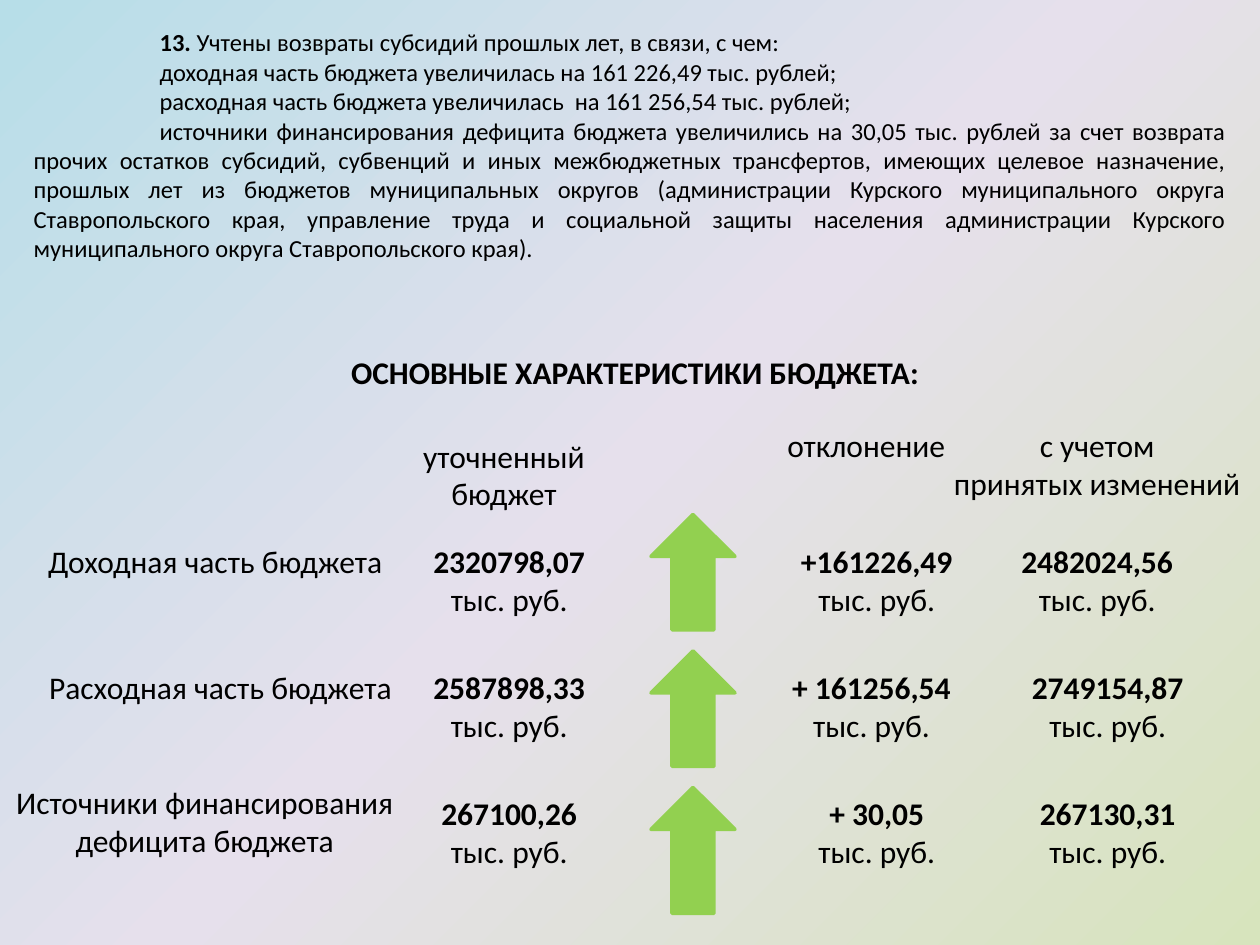
from pptx import Presentation
from pptx.dml.color import RGBColor
from pptx.enum.shapes import MSO_SHAPE
from pptx.enum.text import MSO_ANCHOR, MSO_AUTO_SIZE, PP_ALIGN
from pptx.oxml import parse_xml
from pptx.oxml.ns import nsdecls
from pptx.util import Inches, Pt

UP_ARROW = MSO_SHAPE.UP_ARROW
TOP = MSO_ANCHOR.TOP
GROW = MSO_AUTO_SIZE.SHAPE_TO_FIT_TEXT
CENTER, JUSTIFY = PP_ALIGN.CENTER, PP_ALIGN.JUSTIFY
COLORS = {"text": "000000", "arrow": "92D050",
          "green": "D7E4BD", "lilac": "E6E0EC", "blue": "B7DEE8"}
FONT = "Calibri"
UNIT = "тыс. руб."

deck = Presentation()
deck.slide_width, deck.slide_height = Inches(10), Inches(7.5)
COL, ROW = deck.slide_width / 120, deck.slide_height / 90
page = deck.slides.add_slide(deck.slide_layouts[1])


def place(box, left, top, width, height):
    """Put a shape on the grid of 120 columns and 90 rows."""
    box.left, box.width = round(left * COL), round(width * COL)
    box.top, box.height = round(top * ROW), round(height * ROW)


def write(box, lines, size=18, align=CENTER, bold_first=False, wrap=True):
    """Fill a box with one paragraph per line."""
    frame = box.text_frame
    frame.text = "\n".join(lines)
    frame.word_wrap, frame.auto_size = wrap, GROW
    frame.vertical_anchor = TOP
    for index, para in enumerate(frame.paragraphs):
        para.alignment = align
        para.space_before = Pt(0)
        para.font.name, para.font.size = FONT, Pt(size)
        para.font.bold = bold_first and index == 0
        para.font.color.rgb = RGBColor.from_string(COLORS["text"])


# Background: radial gradient centred on the lower right corner
page.background.fill.gradient()
stops = "".join(
    f'<a:gs pos="{share * 1000}"><a:srgbClr val="{COLORS[name]}"/></a:gs>'
    for share, name in ((0, "green"), (50, "lilac"), (100, "blue")))
old_gradient = page.element.xpath(".//p:bgPr/a:gradFill")[0]
old_gradient.getparent().replace(old_gradient, parse_xml(
    f'<a:gradFill {nsdecls("a")} rotWithShape="1"><a:gsLst>{stops}</a:gsLst>'
    '<a:path path="circle"><a:fillToRect l="100000" t="100000"/></a:path>'
    '</a:gradFill>'))

# Heading
title = page.shapes.title
place(title, 32, 33, 57, 4.8)
write(title, ["ОСНОВНЫЕ ХАРАКТЕРИСТИКИ БЮДЖЕТА:"], bold_first=True, wrap=False)

# Introduction with indented first lines
body = page.placeholders[1]
place(body, 2, 2, 116, 23.9)
write(body, [
    "Учтены возвраты субсидий прошлых лет, в связи, с чем:",
    "доходная часть бюджета увеличилась на 161 226,49 тыс. рублей;",
    "расходная часть бюджета увеличилась  на 161 256,54 тыс. рублей;",
    "источники финансирования дефицита бюджета увеличились на 30,05 тыс. "
    "рублей за счет возврата прочих остатков субсидий, субвенций и иных "
    "межбюджетных трансфертов, имеющих целевое назначение, прошлых лет из "
    "бюджетов муниципальных округов (администрации Курского муниципального "
    "округа Ставропольского края, управление труда и социальной защиты "
    "населения администрации Курского муниципального округа "
    "Ставропольского края).",
], size=14, align=JUSTIFY)
for para in body.text_frame.paragraphs:
    properties = para._p.get_or_add_pPr()
    properties.set("marL", "0")
    properties.set("indent", str(Inches(1)))
    properties.append(parse_xml(f'<a:buNone {nsdecls("a")}/>'))
first = body.text_frame.paragraphs[0]
sentence = first.runs[0].text
first.runs[0].text = "13. "
first.runs[0].font.bold = True
first.add_run().text = sentence

# Column headings and row labels: left, top, width, lines
labels = [
    (34, 41, 28, ["уточненный", "бюджет"]),
    (73, 40, 19, ["отклонение"]),
    (89, 40, 31, ["с учетом", "принятых изменений"]),
    (3, 51, 35, ["Доходная часть бюджета"]),
    (3, 63, 36, ["Расходная часть бюджета"]),
    (0, 74, 39, ["Источники финансирования дефицита бюджета"]),
]
for left, top, width, lines in labels:
    box = page.shapes.add_textbox(0, 0, 0, 0)
    place(box, left, top, width, 8.5 if top == 74 or len(lines) > 1 else 4.8)
    write(box, lines)

# Figures: each row holds (left, width, amount) for its three columns
figures = [
    [(39, 19, "2320798,07"), (75, 17, "+161226,49"), (93, 23, "2482024,56")],
    [(39, 19, "2587898,33"), (73, 20, "+ 161256,54"), (96, 19, "2749154,87")],
    [(39, 19, "267100,26"), (73, 21, "+ 30,05"), (96, 19, "267130,31")],
]
for index, cells in enumerate(figures):
    for left, width, amount in cells:
        box = page.shapes.add_textbox(0, 0, 0, 0)
        place(box, left, 51 + 12 * index, width, 8.5)
        write(box, [amount, UNIT], bold_first=True)

# Growth arrows, the last one slightly taller
for index, height in enumerate((11, 11, 12)):
    arrow = page.shapes.add_shape(UP_ARROW, 0, 0, 0, 0)
    place(arrow, 62, 49 + 13 * index, 8, height)
    arrow.shadow.inherit = False
    arrow.fill.solid()
    arrow.fill.fore_color.rgb = RGBColor.from_string(COLORS["arrow"])
    arrow.line.color.rgb = RGBColor.from_string(COLORS["arrow"])
    arrow.line.width = Pt(2)

deck.save("out.pptx")
